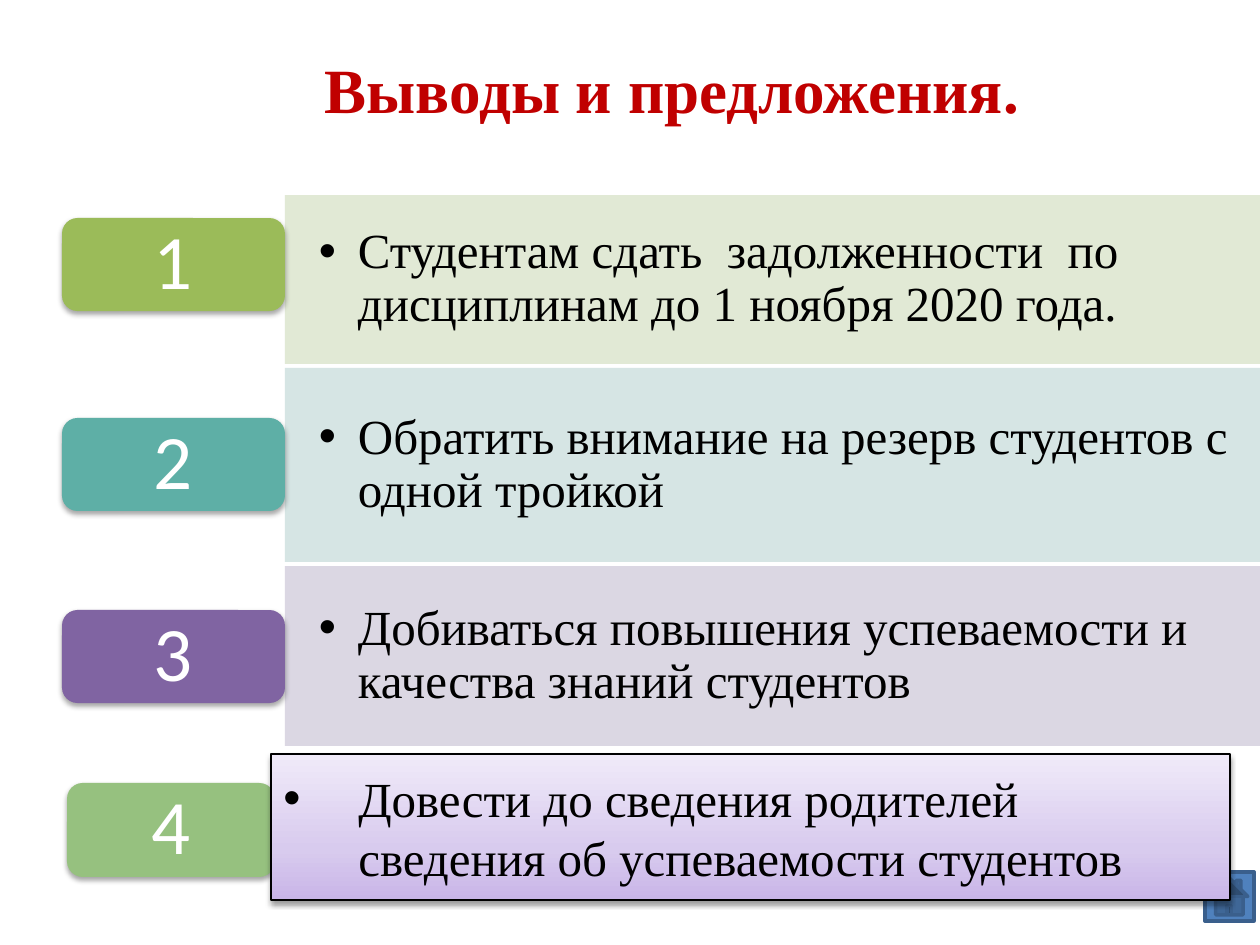
from lxml import etree
from pptx import Presentation
from pptx.dml.color import RGBColor
from pptx.enum.shapes import MSO_SHAPE
from pptx.enum.text import MSO_ANCHOR, PP_ALIGN
from pptx.oxml.ns import qn
from pptx.util import Inches, Pt

RECT = MSO_SHAPE.RECTANGLE
ROUND_RECT = MSO_SHAPE.ROUNDED_RECTANGLE
HOME_BUTTON = MSO_SHAPE.ACTION_BUTTON_HOME
MIDDLE = MSO_ANCHOR.MIDDLE
LEFT, CENTER = PP_ALIGN.LEFT, PP_ALIGN.CENTER

PX_PER_INCH = 126
TITLE_ONLY = 5
SERIF, SANS = "Times New Roman", "Calibri"

# text, band colour, band top, band height, badge colour, badge top
CONCLUSIONS = [
    ("Студентам сдать  задолженности  по дисциплинам до 1 ноября 2020 года.",
     "DEE7D1", 195, 169, "9BBB59", 218),
    ("Обратить внимание на резерв студентов с одной тройкой",
     "D2E3E2", 368, 194, "5EAFA6", 418),
    ("Добиваться повышения успеваемости и качества знаний студентов",
     "D8D3E0", 566, 180, "8064A2", 610),
]


def px(n):
    return round(n * Inches(1) / PX_PER_INCH)


def rgb(value):
    return RGBColor.from_string(value)


def add_color(parent, value, alpha=None):
    color = etree.SubElement(parent, qn("a:srgbClr"), val=value)
    if alpha is not None:
        etree.SubElement(color, qn("a:alpha"), val=str(alpha * 1000))


class Deck:
    def __init__(self):
        self.prs = Presentation()
        self.prs.slide_width, self.prs.slide_height = px(1260), px(945)
        self.s = self.prs.slides.add_slide(self.prs.slide_layouts[TITLE_ONLY])

    def format_text(self, p, size, color, font=SERIF, align=LEFT, bold=False):
        p.alignment = align
        for r in p.runs:
            r.font.name, r.font.size, r.font.bold = font, Pt(size), bold
            r.font.color.rgb = rgb(color)

    def hang(self, p, indent, bullet=True):
        """Indent the paragraph, with a bullet hanging to its left."""
        pPr = p._p.get_or_add_pPr()
        pPr.set("marL", str(px(indent)))
        pPr.set("indent", str(-px(indent) if bullet else 0))
        if bullet:
            etree.SubElement(pPr, qn("a:buFont"), typeface="Arial")
            etree.SubElement(pPr, qn("a:buChar"), char="•")

    def title(self, text, x, y, w, h):
        sp = self.s.shapes.title
        sp.left, sp.top, sp.width, sp.height = map(px, (x, y, w, h))
        tf = sp.text_frame
        tf.text = text
        tf.vertical_anchor = MIDDLE
        self.format_text(tf.paragraphs[0], 36, "C00000", align=CENTER, bold=True)

    def shape(self, kind, x, y, w, h, fill, line=None, line_width=1):
        sp = self.s.shapes.add_shape(kind, px(x), px(y), px(w), px(h))
        sp.shadow.inherit = False
        sp.fill.solid()
        sp.fill.fore_color.rgb = rgb(fill)
        if line:
            sp.line.color.rgb = rgb(line)
            sp.line.width = Pt(line_width)
        else:
            sp.line.fill.background()
        tf = sp.text_frame
        tf.word_wrap = True
        tf.vertical_anchor = MIDDLE
        return sp

    def drop_shadow(self, sp, alpha):
        effects = sp._element.spPr.find(qn("a:effectLst"))
        shadow = etree.SubElement(
            effects, qn("a:outerShdw"), blurRad=str(Pt(3.1)), dist=str(Pt(1.8)),
            dir="5400000", rotWithShape="0")
        add_color(shadow, "000000", alpha)

    def band(self, text, x, y, w, h, fill):
        sp = self.shape(RECT, x, y, w, h, fill)
        color = sp._element.spPr.find(qn("a:solidFill"))[0]
        etree.SubElement(color, qn("a:alpha"), val="90000")
        tf = sp.text_frame
        tf.margin_left = tf.margin_right = px(34)
        tf.margin_top = tf.margin_bottom = px(18)
        tf.text = text
        p = tf.paragraphs[0]
        p.line_spacing = 0.9
        self.format_text(p, 28, "000000")
        self.hang(p, 39)

    def badge(self, text, x, y, w, h, fill):
        sp = self.shape(ROUND_RECT, x, y, w, h, fill)
        self.drop_shadow(sp, 35)
        tf = sp.text_frame
        tf.margin_top = tf.margin_bottom = px(11)
        tf.text = text
        p = tf.paragraphs[0]
        p.line_spacing = 0.9
        self.format_text(p, 44, "FFFFFF", SANS, CENTER)

    def gradient_box(self, lines, x, y, w, h, stops):
        """Box shaded from bottom to top; only its first line has a bullet."""
        sp = self.shape(RECT, x, y, w, h, stops[0][1], "000000", 0.75)
        sp.fill.gradient()
        sp.fill.gradient_angle = 90
        gs_list = sp._element.spPr.find(qn("a:gradFill")).find(qn("a:gsLst"))
        for gs in list(gs_list):
            gs_list.remove(gs)
        for pos, color in stops:
            gs = etree.SubElement(gs_list, qn("a:gs"), pos=str(pos * 1000))
            add_color(gs, color)
        self.drop_shadow(sp, 38)
        tf = sp.text_frame
        tf.text = "\n".join(lines)
        for i, p in enumerate(tf.paragraphs):
            self.format_text(p, 28, "000000")
            self.hang(p, 75, bullet=i == 0)


def main():
    deck = Deck()
    deck.title("Выводы и предложения.", 116, 42, 1112, 93)
    deck.shape(HOME_BUTTON, 1205, 872, 49, 49, "4F81BD", "3A5F8C", 2)
    for i, (text, tint, top, height, color, badge_top) in enumerate(CONCLUSIONS, 1):
        deck.band(text, 285, top, 1027, height, tint)
        deck.badge(str(i), 62, badge_top, 223, 93, color)
    deck.badge("4", 67, 783, 208, 94, "96C17F")
    deck.gradient_box(
        ["Довести до сведения родителей", "сведения об успеваемости студентов"],
        271, 754, 959, 146, [(0, "C9B5E8"), (35, "D8CBEE"), (100, "F0EAF9")])
    deck.prs.save("out.pptx")


if __name__ == "__main__":
    main()
